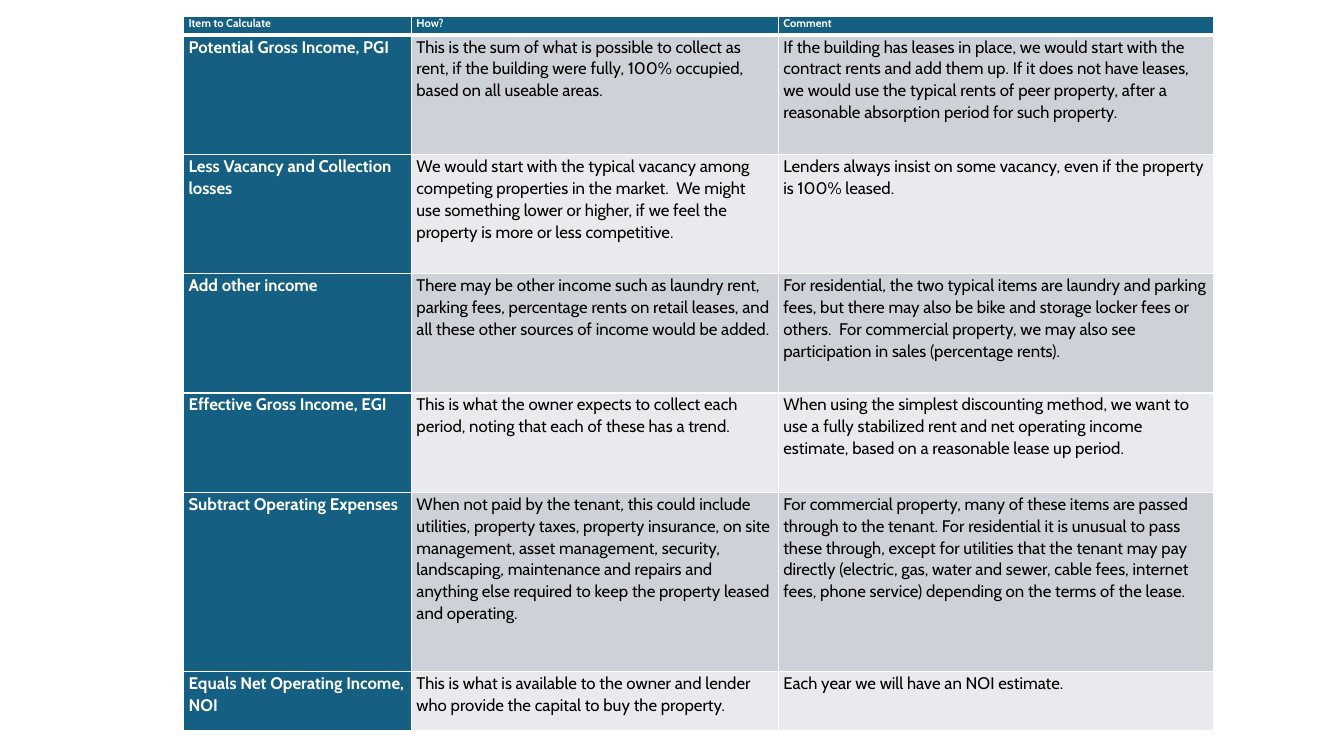
from dataclasses import dataclass

from lxml import etree
from pptx import Presentation
from pptx.dml.color import RGBColor
from pptx.oxml.ns import qn
from pptx.util import Pt

BLANK_LAYOUT = 6


@dataclass(frozen=True)
class Theme:
    font: str = "Cabin"
    header_size: float = 8
    body_size: float = 12
    line_spacing: float = 1.07
    accent: str = "156082"
    dark_band: str = "CCD2D8"
    light_band: str = "E8EAED"
    white: str = "FFFFFF"
    black: str = "000000"
    thin_border: float = 1
    thick_border: float = 3


THEME = Theme()

# Table geometry in points
LEFT, TOP = 131, 11.5
COLUMN_WIDTHS = (162.75, 262.1, 311)
ROW_HEIGHTS = (13.7, 85.2, 85.2, 85.2, 71, 127.9, 42.6)
SIDE_MARGIN = 3.75

ROWS = (
    ("Item to Calculate", "How?", "Comment"),
    (
        "Potential Gross Income, PGI",
        "This is the sum of what is possible to collect as rent, if the building were fully, "
        "100% occupied, based on all useable areas.",
        "If the building has leases in place, we would start with the contract rents and add "
        "them up. If it does not have leases, we would use the typical rents of peer property, "
        "after a reasonable absorption period for such property.",
    ),
    (
        "Less Vacancy and Collection losses",
        "We would start with the typical vacancy among competing properties in the market.  We "
        "might use something lower or higher, if we feel the property is more or less "
        "competitive.",
        "Lenders always insist on some vacancy, even if the property is 100% leased.",
    ),
    (
        "Add other income",
        "There may be other income such as laundry rent, parking fees, percentage rents on "
        "retail leases, and all these other sources of income would be added.",
        "For residential, the two typical items are laundry and parking fees, but there may "
        "also be bike and storage locker fees or others.  For commercial property, we may also "
        "see participation in sales (percentage rents).",
    ),
    (
        "Effective Gross Income, EGI",
        "This is what the owner expects to collect each period, noting that each of these has "
        "a trend.",
        "When using the simplest discounting method, we want to use a fully stabilized rent "
        "and net operating income estimate, based on a reasonable lease up period.",
    ),
    (
        "Subtract Operating Expenses",
        "When not paid by the tenant, this could include utilities, property taxes, property "
        "insurance, on site management, asset management, security, landscaping, maintenance "
        "and repairs and anything else required to keep the property leased and operating.",
        "For commercial property, many of these items are passed through to the tenant. For "
        "residential it is unusual to pass these through, except for utilities that the tenant "
        "may pay directly (electric, gas, water and sewer, cable fees, internet fees, phone "
        "service) depending on the terms of the lease.",
    ),
    (
        "Equals Net Operating Income, NOI",
        "This is what is available to the owner and lender who provide the capital to buy the "
        "property.",
        "Each year we will have an NOI estimate.",
    ),
)


def set_borders(cell, top, bottom):
    """Draw white borders; they must precede the fill in the cell properties."""
    properties = cell._tc.get_or_add_tcPr()
    thin = THEME.thin_border
    for side, width in (("L", thin), ("R", thin), ("T", top), ("B", bottom)):
        line = etree.SubElement(properties, qn(f"a:ln{side}"), w=str(Pt(width)))
        fill = etree.SubElement(line, qn("a:solidFill"))
        etree.SubElement(fill, qn("a:srgbClr"), val=THEME.white)


def set_fill(cell, color):
    cell.fill.solid()
    cell.fill.fore_color.rgb = RGBColor.from_string(color)


def write_text(cell, text, size, color, bold):
    cell.margin_left = cell.margin_right = Pt(SIDE_MARGIN)
    cell.margin_top = cell.margin_bottom = Pt(0)
    paragraph = cell.text_frame.paragraphs[0]
    paragraph.line_spacing = THEME.line_spacing
    run = paragraph.add_run()
    run.text = text
    run.font.name = THEME.font
    run.font.size = Pt(size)
    run.font.bold = bold
    run.font.color.rgb = RGBColor.from_string(color)


def style_cell(cell, text, row, column):
    is_header = row == 0
    is_label = is_header or column == 0
    band = THEME.dark_band if row % 2 else THEME.light_band
    set_borders(
        cell,
        top=THEME.thick_border if row == 1 else THEME.thin_border,
        bottom=THEME.thick_border if is_header else THEME.thin_border,
    )
    set_fill(cell, THEME.accent if is_label else band)
    write_text(
        cell,
        text,
        size=THEME.header_size if is_header else THEME.body_size,
        color=THEME.white if is_label else THEME.black,
        bold=is_label,
    )


def add_income_table(slide):
    table = slide.shapes.add_table(
        len(ROWS), len(COLUMN_WIDTHS),
        Pt(LEFT), Pt(TOP), Pt(sum(COLUMN_WIDTHS)), Pt(sum(ROW_HEIGHTS)),
    ).table
    table.first_col = True
    for column, width in zip(table.columns, COLUMN_WIDTHS):
        column.width = Pt(width)
    for table_row, height in zip(table.rows, ROW_HEIGHTS):
        table_row.height = Pt(height)
    for row, texts in enumerate(ROWS):
        for column, text in enumerate(texts):
            style_cell(table.cell(row, column), text, row, column)


def main():
    # Widescreen slide
    presentation = Presentation()
    presentation.slide_width = Pt(960)
    presentation.slide_height = Pt(540)
    slide = presentation.slides.add_slide(presentation.slide_layouts[BLANK_LAYOUT])

    # Steps from gross income to net operating income
    add_income_table(slide)
    presentation.save("out.pptx")


if __name__ == "__main__":
    main()
